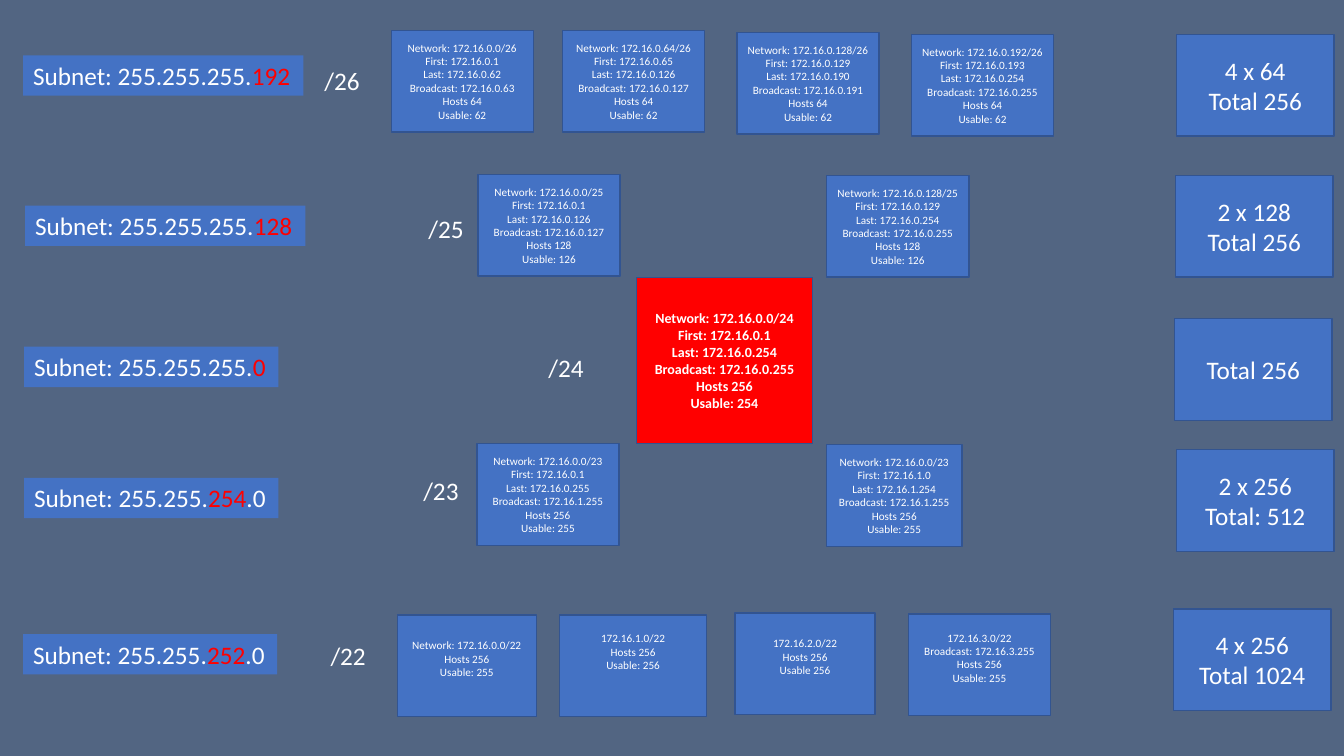
"""Builds a slide comparing the subnets /26 to /22 of one network."""
from dataclasses import dataclass

import pptx
import pptx.dml.color
import pptx.enum.shapes
import pptx.enum.text
import pptx.util

Inches = pptx.util.Inches
Align = pptx.enum.text.PP_ALIGN
Anchor = pptx.enum.text.MSO_ANCHOR


@dataclass(frozen=True)
class Theme:
    """Colours, font and type sizes of the slide."""
    back: str = "526582"
    box: str = "4472C4"
    edge: str = "325491"
    accent: str = "FF0000"
    text: str = "FFFFFF"
    font: str = "Calibri"
    large: int = 18
    medium: int = 10
    small: int = 8
    small_line: float = 0.14


def rgb(value):
    """Turns a hex string into a colour."""
    return pptx.dml.color.RGBColor.from_string(value)


class SubnetSlide:
    """Draws the elements of the subnet overview on one slide."""

    def __init__(self, prs, theme):
        """Adds a blank slide with the theme's background."""
        self.theme = theme
        self.s = prs.slides.add_slide(prs.slide_layouts[6])
        self.s.background.fill.solid()
        self.s.background.fill.fore_color.rgb = rgb(theme.back)

    def style(self, p, size, align, bold=False):
        """Sets font and alignment of a paragraph."""
        p.alignment = align
        p.font.name = self.theme.font
        p.font.size = pptx.util.Pt(size)
        p.font.bold = bold
        p.font.color.rgb = rgb(self.theme.text)

    def fit(self, tf):
        """Makes a one-line frame hug its text."""
        tf.word_wrap = False
        tf.auto_size = pptx.enum.text.MSO_AUTO_SIZE.SHAPE_TO_FIT_TEXT
        tf.vertical_anchor = Anchor.TOP

    def rect(self, x, y, w, h, fill, edge=None):
        """Adds a filled rectangle, outlined when an edge colour is given."""
        sp = self.s.shapes.add_shape(
            pptx.enum.shapes.MSO_SHAPE.RECTANGLE,
            Inches(x), Inches(y), Inches(w), Inches(h))
        sp.shadow.inherit = False
        sp.fill.solid()
        sp.fill.fore_color.rgb = rgb(fill)
        if edge:
            sp.line.color.rgb = rgb(edge)
            sp.line.width = pptx.util.Pt(1)
        else:
            sp.line.fill.background()
        return sp

    def box(self, x, y, w, h, lines, size, fill=None, bold=False, lift=0):
        """Adds a centred box, its text raised by lift half-lines."""
        sp = self.rect(x, y, w, h, fill or self.theme.box, self.theme.edge)
        tf = sp.text_frame
        tf.word_wrap = True
        tf.vertical_anchor = Anchor.MIDDLE
        tf.margin_bottom = Inches(0.05 + lift * self.theme.small_line)
        tf.text = "\n".join(lines)
        for p in tf.paragraphs:
            self.style(p, size, Align.CENTER, bold)

    def prefix(self, x, y, text):
        """Adds a prefix length such as /24."""
        tf = self.s.shapes.add_textbox(
            Inches(x), Inches(y), Inches(0.56), Inches(0.4)).text_frame
        self.fit(tf)
        tf.text = text
        self.style(tf.paragraphs[0], self.theme.large, Align.LEFT)

    def mask(self, x, y, w, before, changed, after=""):
        """Adds a subnet mask with the changed octet highlighted."""
        tf = self.rect(x, y, w, 0.4, self.theme.box).text_frame
        self.fit(tf)
        p = tf.paragraphs[0]
        self.style(p, self.theme.large, Align.LEFT)
        for text in filter(None, ("Subnet: " + before, changed, after)):
            r = p.add_run()
            r.text = text
            if text == changed:
                r.font.color.rgb = rgb(self.theme.accent)


def details(network, first, last, broadcast, hosts, usable):
    """Lists the six lines that describe a network."""
    return [f"Network: 172.16.{network}", f"First: 172.16.{first}",
            f"Last: 172.16.{last}", f"Broadcast: 172.16.{broadcast}",
            f"Hosts {hosts}", f"Usable: {usable}"]


MASKS = [
    (0.23, 0.55, 2.78, "255.255.255.", "192"),
    (0.25, 2.04, 2.78, "255.255.255.", "128"),
    (0.24, 3.44, 2.52, "255.255.255.", "0"),
    (0.24, 4.74, 2.52, "255.255.", "254", ".0"),
    (0.23, 6.29, 2.52, "255.255.", "252", ".0"),
]
PREFIXES = [(3.12, 0.6, "/26"), (4.15, 2.07, "/25"), (5.34, 3.45, "/24"),
            (4.1, 4.67, "/23"), (3.18, 6.3, "/22")]
TOTALS = [
    (11.67, 0.34, ["4 x 64", "Total 256"]),
    (11.66, 1.74, ["2 x 128", "Total 256"]),
    (11.65, 3.16, ["Total 256"]),
    (11.67, 4.46, ["2 x 256", "Total: 512"]),
    (11.64, 6.04, ["4 x 256", "Total 1024"]),
]
NETWORKS = [
    (3.88, 0.3, 1.41, ("0.0/26", "0.1", "0.62", "0.63", 64, 62)),
    (5.58, 0.3, 1.41, ("0.64/26", "0.65", "0.126", "0.127", 64, 62)),
    (7.31, 0.32, 1.41, ("0.128/26", "0.129", "0.190", "0.191", 64, 62)),
    (9.04, 0.34, 1.41, ("0.192/26", "0.193", "0.254", "0.255", 64, 62)),
    (4.74, 1.73, 1.41, ("0.0/25", "0.1", "0.126", "0.127", 128, 126)),
    (8.2, 1.74, 1.41, ("0.128/25", "0.129", "0.254", "0.255", 128, 126)),
    (4.73, 4.4, 1.41, ("0.0/23", "0.1", "0.255", "1.255", 256, 255)),
    (8.2, 4.41, 1.34, ("0.0/23", "1.0", "1.254", "1.255", 256, 255)),
]
BLOCKS = [
    (3.94, 6.1, 1.38, 1,
     ["Network: 172.16.0.0/22", "Hosts 256", "Usable: 255"]),
    (5.55, 6.1, 1.46, 2, ["172.16.1.0/22", "Hosts 256", "Usable: 256"]),
    (7.29, 6.08, 1.39, 1, ["172.16.2.0/22", "Hosts 256", "Usable 256"]),
    (9.01, 6.09, 1.41, 1, ["172.16.3.0/22", "Broadcast: 172.16.3.255",
                           "Hosts 256", "Usable: 255"]),
]


def main():
    """Builds and saves the presentation."""
    prs = pptx.Presentation()
    prs.slide_width, prs.slide_height = Inches(13.33), Inches(7.5)
    theme = Theme()
    slide = SubnetSlide(prs, theme)
    height = 1.01
    for mask in MASKS:
        slide.mask(*mask)
    for prefix in PREFIXES:
        slide.prefix(*prefix)
    for x, y, lines in TOTALS:
        slide.box(x, y, 1.56, height, lines, theme.large)
    for x, y, w, values in NETWORKS:
        slide.box(x, y, w, height, details(*values), theme.small)
    for x, y, w, lift, lines in BLOCKS:
        slide.box(x, y, w, height, lines, theme.small, lift=lift)
    slide.box(6.31, 2.75, 1.75, 1.65,
              details("0.0/24", "0.1", "0.254", "0.255", 256, 254),
              theme.medium, fill=theme.accent, bold=True)
    prs.save("out.pptx")


if __name__ == "__main__":
    main()
